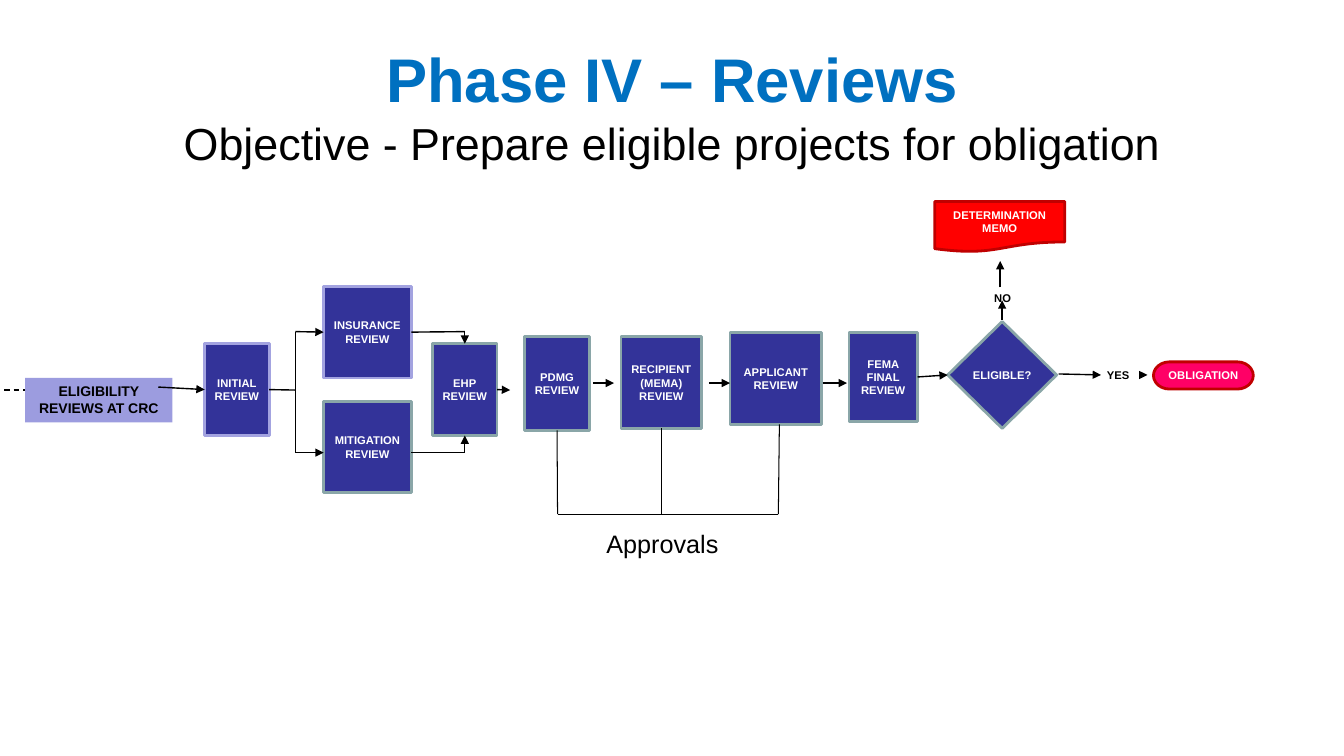
"""Build the Phase IV reviews process slide."""
from collections import namedtuple
from dataclasses import dataclass

from lxml.etree import SubElement
from pptx import Presentation
from pptx.dml.color import RGBColor
from pptx.enum.dml import MSO_LINE
from pptx.enum.shapes import MSO_CONNECTOR, MSO_SHAPE
from pptx.enum.text import MSO_ANCHOR, MSO_AUTO_SIZE, PP_ALIGN
from pptx.oxml.ns import qn
from pptx.util import Inches, Pt

TOP, LEFT, BOTTOM, RIGHT = range(4)
Site = namedtuple("Site", "shape side")


@dataclass(frozen=True)
class Theme:
    font: str = "Arial"
    title: str = "0070C0"
    ink: str = "000000"
    paper: str = "FFFFFF"
    box: str = "333399"
    pale: str = "9C9CDF"
    lilac: str = "A3A3E0"
    sage: str = "8AA6A8"
    memo: str = "FF0000"
    obligation: str = "FF0066"
    edge: str = "C00000"
    title_size: float = 44
    objective_size: float = 32
    approvals_size: float = 18
    source_size: float = 10
    label_size: float = 8
    box_line: float = 2
    arrow_line: float = 1
    bracket_line: float = 0.75


class Flow:
    def __init__(self, slide, theme):
        self.slide = slide
        self.theme = theme

    def style(self, r, size, color, bold):
        r.font.name = self.theme.font
        r.font.size = Pt(size)
        r.font.bold = bold
        r.font.color.rgb = RGBColor.from_string(color)

    def fill_text(self, tf, text, size, color, bold=True, align=PP_ALIGN.CENTER):
        tf.word_wrap = True
        tf.text = text
        for p in tf.paragraphs:
            p.alignment = align
            for r in p.runs:
                self.style(r, size, color, bold)

    def title(self, heading, objective):
        t = self.theme
        sp = self.slide.shapes.title
        sp.left, sp.top, sp.width, sp.height = map(Inches, (0.67, 0.3, 12, 1.25))
        tf = sp.text_frame
        tf.auto_size = MSO_AUTO_SIZE.NONE
        tf.vertical_anchor = MSO_ANCHOR.TOP
        tf.margin_top = Inches(0.11)
        tf.text = "\v".join((heading, objective))
        p = tf.paragraphs[0]
        p.alignment = PP_ALIGN.CENTER
        self.style(p.runs[0], t.title_size, t.title, True)
        self.style(p.runs[1], t.objective_size, t.ink, False)

    def shape(self, at, text="", line=None, fill=None, kind=MSO_SHAPE.RECTANGLE,
              size=None, color=None, anchor=MSO_ANCHOR.MIDDLE):
        t = self.theme
        sp = self.slide.shapes.add_shape(kind, *map(Inches, at))
        sp.shadow.inherit = False
        sp.fill.solid()
        sp.fill.fore_color.rgb = RGBColor.from_string(fill or t.box)
        if line:
            sp.line.color.rgb = RGBColor.from_string(line)
            sp.line.width = Pt(t.box_line)
        else:
            sp.line.fill.background()
        tf = sp.text_frame
        tf.margin_left = tf.margin_right = Inches(0.05)
        tf.vertical_anchor = anchor
        if text:
            self.fill_text(tf, text, size or t.label_size, color or t.paper)
        return sp

    def label(self, at, text, size=None, color=None, bold=True, align=PP_ALIGN.CENTER):
        t = self.theme
        sp = self.slide.shapes.add_textbox(*map(Inches, at))
        self.fill_text(sp.text_frame, text, size or t.label_size, color or t.ink, bold, align)

    def line(self, begin, end, arrow=False, width=None, dash=None):
        t = self.theme
        points = [(0, 0) if isinstance(e, Site) else e for e in (begin, end)]
        cx = self.slide.shapes.add_connector(
            MSO_CONNECTOR.STRAIGHT, *(Inches(v) for point in points for v in point))
        if isinstance(begin, Site):
            cx.begin_connect(begin.shape, begin.side)
        if isinstance(end, Site):
            cx.end_connect(end.shape, end.side)
        cx.line.color.rgb = RGBColor.from_string(t.ink)
        cx.line.width = Pt(width or t.arrow_line)
        if dash:
            cx.line.dash_style = dash
        sp_pr = cx._element.spPr
        if arrow:
            SubElement(sp_pr.find(qn("a:ln")), qn("a:tailEnd"), type="triangle")
        SubElement(sp_pr, qn("a:effectLst"))

    def arrow(self, begin, end):
        self.line(begin, end, arrow=True)


def main():
    t = Theme()
    prs = Presentation()
    prs.slide_width, prs.slide_height = Inches(13.33), Inches(7.5)
    s = prs.slides.add_slide(prs.slide_layouts[5])
    flow = Flow(s, t)
    flow.title("Phase IV – Reviews", "Objective - Prepare eligible projects for obligation")

    flow.line((0.04, 3.87), (0.29, 3.87), dash=MSO_LINE.DASH)
    flow.shape((0.25, 3.75, 1.46, 0.44), "ELIGIBILITY REVIEWS AT CRC", fill=t.pale,
               size=t.source_size, color=t.ink, anchor=MSO_ANCHOR.TOP)

    reviews = [
        ("INITIAL", (2.03, 3.41, 0.64, 0.91), t.lilac),
        ("INSURANCE", (3.21, 2.84, 0.87, 0.91), t.lilac),
        ("MITIGATION", (3.21, 3.98, 0.87, 0.91), t.sage),
        ("EHP", (4.29, 3.41, 0.64, 0.91), t.sage),
        ("PDMG", (5.2, 3.34, 0.65, 0.93), t.sage),
        ("RECIPIENT (MEMA)", (6.16, 3.34, 0.8, 0.91), t.sage),
        ("APPLICANT", (7.24, 3.3, 0.91, 0.91), t.sage),
        ("FEMA FINAL", (8.42, 3.3, 0.68, 0.88), t.sage),
    ]
    initial, insurance, mitigation, ehp, pdmg, recipient, applicant, final = [
        flow.shape(at, f"{name}\nREVIEW", line) for name, at, line in reviews]
    eligible = flow.shape((9.4, 3.19, 1.08, 1.06), line=t.sage, kind=MSO_SHAPE.DIAMOND)
    flow.shape((9.27, 2, 1.29, 0.5), "DETERMINATION MEMO", t.edge, t.memo,
               MSO_SHAPE.FLOWCHART_DOCUMENT)
    flow.shape((11.44, 3.59, 0.99, 0.27), "OBLIGATION", t.edge, t.obligation,
               MSO_SHAPE.FLOWCHART_TERMINATOR)

    fork_x, join_x, upper_y, lower_y = 2.93, 4.61, 3.29, 4.49
    flow.line(Site(initial, RIGHT), (fork_x, 3.87))
    flow.line((fork_x, upper_y), (fork_x, lower_y))
    flow.line(Site(insurance, RIGHT), (join_x, upper_y))
    flow.line((4.08, lower_y), (join_x, lower_y))
    for begin, end in [
        ((1.57, 3.84), Site(initial, LEFT)),
        ((fork_x, upper_y), Site(insurance, LEFT)),
        ((fork_x, lower_y), (3.21, lower_y)),
        ((join_x, upper_y), Site(ehp, TOP)),
        ((join_x, lower_y), Site(ehp, BOTTOM)),
        (Site(ehp, RIGHT), (5.06, 3.87)),
        ((5.88, 3.8), (6.09, 3.8)),
        ((7.03, 3.8), (7.24, 3.8)),
        ((8.16, 3.8), (8.4, 3.8)),
        (Site(final, RIGHT), Site(eligible, LEFT)),
        ((9.94, 3.17), (9.94, 2.98)),
        ((9.92, 2.85), (9.92, 2.59)),
        ((10.5, 3.71), (10.92, 3.72)),
        ((11.35, 3.72), (11.38, 3.72)),
    ]:
        flow.arrow(begin, end)

    bracket_y = 5.1
    for begin, x in [(Site(pdmg, BOTTOM), 5.53), (Site(recipient, BOTTOM), 6.56),
                     ((7.73, 4.21), 7.72)]:
        flow.line(begin, (x, bracket_y), width=t.bracket_line)
    flow.line((7.72, bracket_y), (5.53, bracket_y), width=t.bracket_line)

    flow.label((9.63, 2.84, 0.63, 0.24), "NO")
    flow.label((9.55, 3.61, 0.85, 0.24), "ELIGIBLE?", color=t.paper, align=PP_ALIGN.LEFT)
    flow.label((10.88, 3.61, 0.5, 0.24), "YES", align=PP_ALIGN.LEFT)
    flow.label((5.43, 5.19, 2.28, 0.4), "Approvals", t.approvals_size, bold=False)
    prs.save("out.pptx")


if __name__ == "__main__":
    main()
